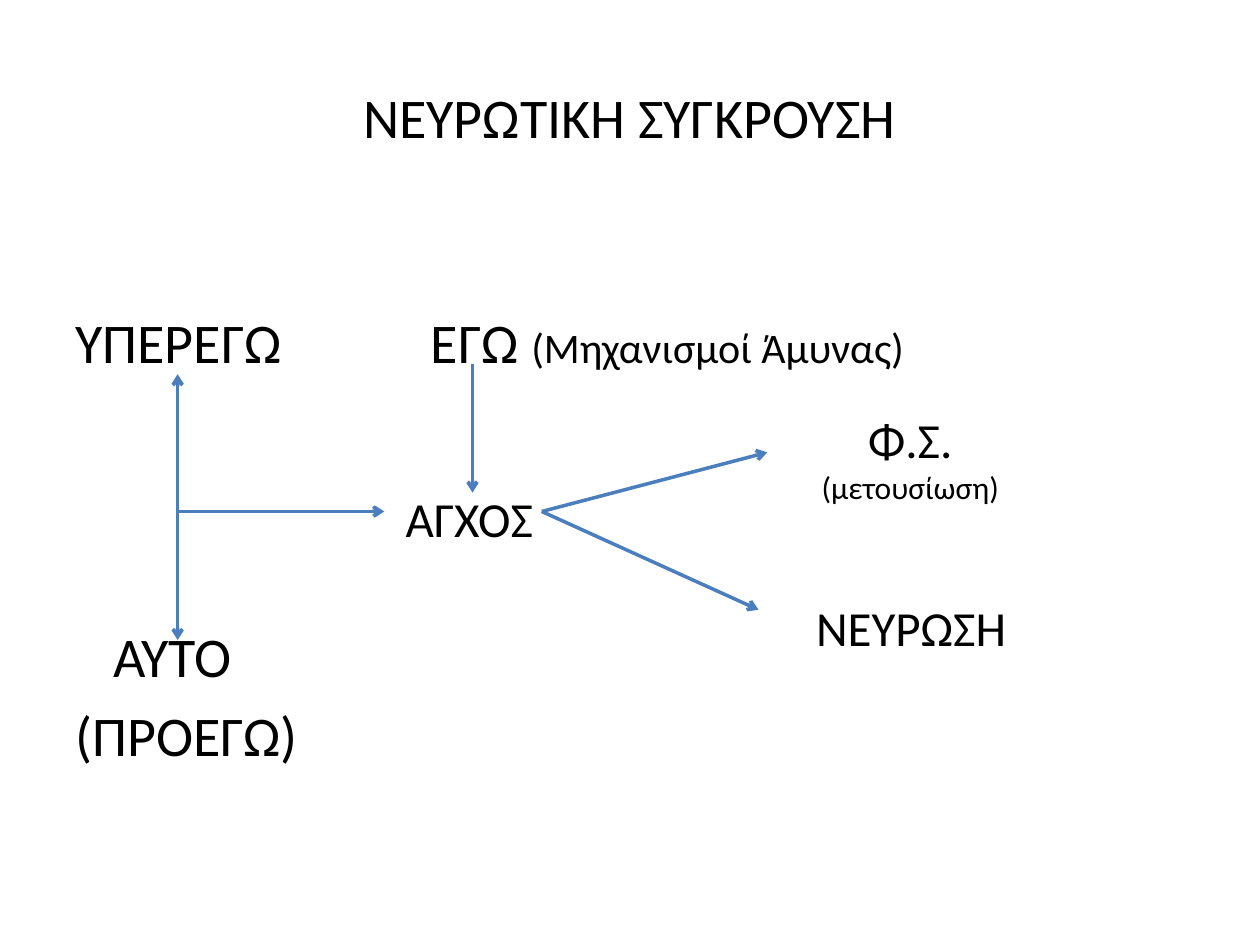
from lxml import etree
from pptx import Presentation
from pptx import util as u
from pptx.dml.color import RGBColor
from pptx.enum import shapes, text
from pptx.oxml.ns import qn

BLACK = RGBColor(0x00, 0x00, 0x00)
BLUE = RGBColor(0x4B, 0x7E, 0xBC)
LEFT, CENTER = text.PP_ALIGN.LEFT, text.PP_ALIGN.CENTER
TOP, MIDDLE = text.MSO_ANCHOR.TOP, text.MSO_ANCHOR.MIDDLE

presentation = Presentation()
presentation.slide_width = u.Inches(10)
presentation.slide_height = u.Inches(7.5)
slide = presentation.slides.add_slide(presentation.slide_layouts[6])


def place(*shares):
    """Turn alternating x and y percentages of the slide into lengths."""
    sides = (presentation.slide_width, presentation.slide_height)
    return [round(share / 100 * sides[i % 2]) for i, share in enumerate(shares)]


# Each label: left, top, width, height; alignment; anchor; paragraphs of (text, size) runs
labels = [
    ((5, 4, 90, 16.67), CENTER, MIDDLE, [[("ΝΕΥΡΩΤΙΚΗ ΣΥΓΚΡΟΥΣΗ", 32)]]),
    ((5, 31.87, 25, 8.53), LEFT, TOP, [[("ΥΠΕΡΕΓΩ", 32)]]),
    ((33.2, 31.87, 50, 8.53), LEFT, TOP, [[("ΕΓΩ ", 32), ("(Μηχανισμοί Άμυνας)", 24)]]),
    ((8, 65.07, 22, 8.53), LEFT, TOP, [[("ΑΥΤΟ", 32)]]),
    ((5, 73.47, 25, 8.53), LEFT, TOP, [[("(ΠΡΟΕΓΩ)", 32)]]),
    ((31.2, 51.07, 21.9, 7.6), LEFT, TOP, [[("ΑΓΧΟΣ", 28)]]),
    ((60.9, 42.67, 22.7, 15.73), CENTER, TOP, [[("Φ.Σ.", 28)], [("(μετουσίωση)", 18)]]),
    ((59.4, 62.53, 25.8, 7.6), CENTER, TOP, [[("ΝΕΥΡΩΣΗ", 28)]]),
]
for box, alignment, anchor, paragraphs in labels:
    frame = slide.shapes.add_textbox(*place(*box)).text_frame
    frame.word_wrap = True
    frame.vertical_anchor = anchor
    for index, runs in enumerate(paragraphs):
        paragraph = frame.add_paragraph() if index else frame.paragraphs[0]
        paragraph.alignment = alignment
        for words, size in runs:
            run = paragraph.add_run()
            run.text = words
            run.font.color.rgb = BLACK
            for name, value in {"name": "Calibri", "size": u.Pt(size)}.items():
                setattr(run.font, name, value)

# Each arrow: start x, y, end x, y; ends that carry an arrowhead
conflict_x, anxiety_y = 14.1, 54.13
anxiety_exit = (43, anxiety_y)
arrows = [
    ((conflict_x, 39.6, conflict_x, 67.73), ("headEnd", "tailEnd")),
    ((conflict_x, anxiety_y, 30.5, anxiety_y), ("tailEnd",)),
    ((37.5, 38.53, 37.5, 52.13), ("tailEnd",)),
    ((*anxiety_exit, 60.9, 47.87), ("tailEnd",)),
    ((*anxiety_exit, 60.2, 64.53), ("tailEnd",)),
]
for points, heads in arrows:
    arrow = slide.shapes.add_connector(shapes.MSO_CONNECTOR.STRAIGHT, *place(*points))
    arrow.line.color.rgb = BLUE
    arrow.line.width = u.Pt(2)
    for head in heads:
        etree.SubElement(arrow.line._get_or_add_ln(), qn(f"a:{head}"), type="arrow")
    etree.SubElement(arrow._element.spPr, qn("a:effectLst"))

presentation.save("out.pptx")
